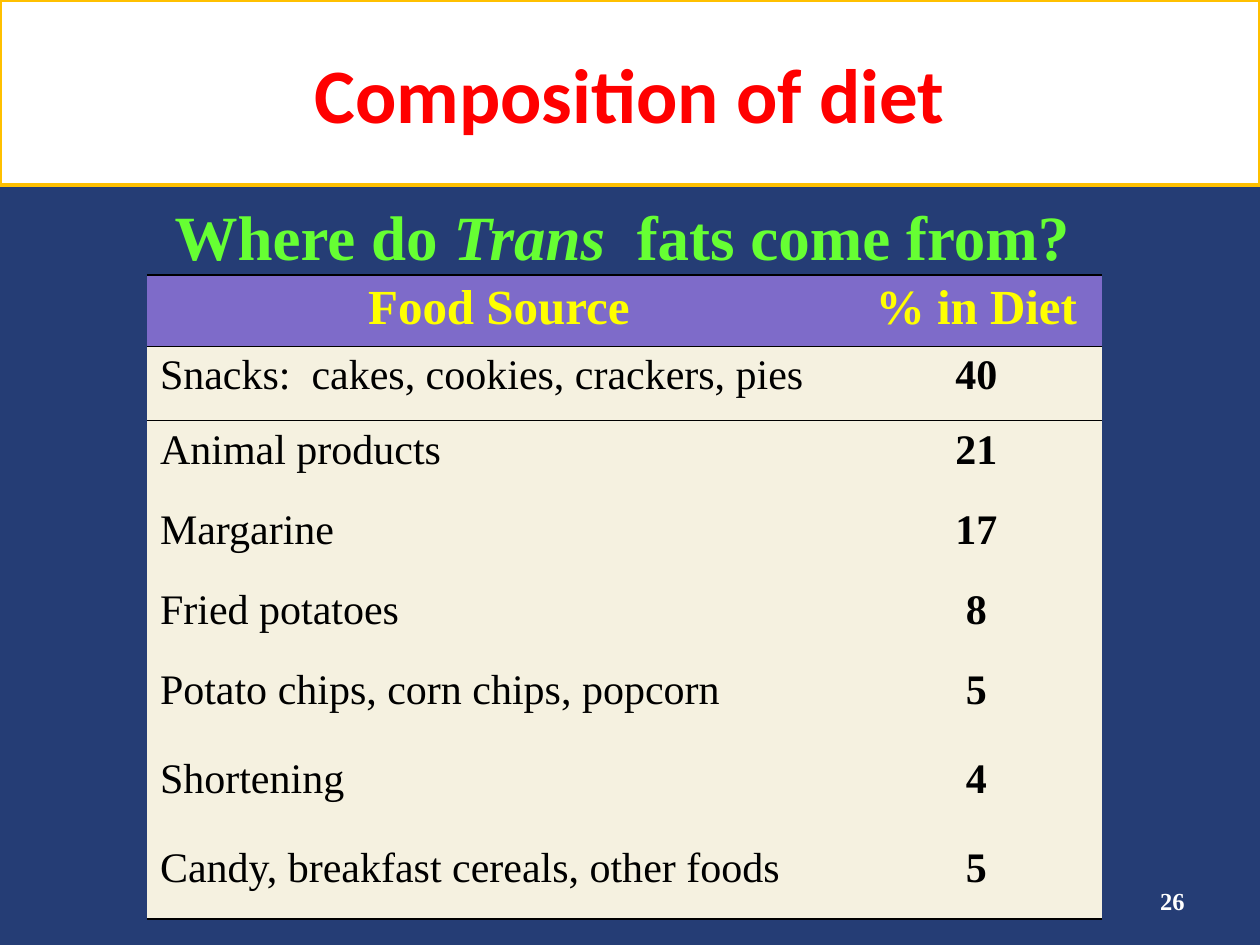
"""Build the slide on where trans fats in the diet come from."""
import pptx
import pptx.dml.color
import pptx.enum.shapes
import pptx.enum.text
import pptx.oxml
import pptx.oxml.ns
import pptx.util

Pt = pptx.util.Pt
RGBColor = pptx.dml.color.RGBColor
ALIGN = pptx.enum.text.PP_ALIGN
ANCHOR = pptx.enum.text.MSO_ANCHOR

NAVY = RGBColor(0x25, 0x3D, 0x75)
WHITE = RGBColor(0xFF, 0xFF, 0xFF)
GOLD = RGBColor(0xFF, 0xC0, 0x00)
RED = RGBColor(0xFF, 0x00, 0x00)
GREEN = RGBColor(0x66, 0xFF, 0x33)
YELLOW = RGBColor(0xFF, 0xFF, 0x00)
PURPLE = RGBColor(0x7E, 0x6B, 0xC9)
CREAM = RGBColor(0xF5, 0xF1, 0xE0)
BLACK = RGBColor(0x00, 0x00, 0x00)
SERIF = "Times New Roman"

TITLE = "Composition of diet"
QUESTION = [("Where do ", False), ("Trans ", True), (" fats come from? ", False)]
PAGE_NUMBER = "26"
HEADER = ("Food Source", "% in Diet")
SOURCES = [
    ("Snacks:  cakes, cookies, crackers, pies", 40),
    ("Animal products", 21),
    ("Margarine", 17),
    ("Fried potatoes", 8),
    ("Potato chips, corn chips, popcorn", 5),
    ("Shortening", 4),
    ("Candy, breakfast cereals, other foods", 5),
]
COLUMN_WIDTHS = (401.75, 144)
ROW_HEIGHTS = (40.5, 42.5, 45.7, 45.7, 45.7, 51, 51, 45.7)
PLAIN_TABLE_STYLE = "{2D5ABB26-0587-4C30-8999-92F81FD0307C}"


def style(paragraph, size, color, align=ALIGN.CENTER, bold=True, name=SERIF):
    paragraph.alignment = align
    font = paragraph.font
    font.name, font.size, font.bold = name, Pt(size), bold
    font.color.rgb = color


def add_text_box(page, left, top, width, height, anchor):
    frame = page.shapes.add_textbox(Pt(left), Pt(top), Pt(width), Pt(height)).text_frame
    frame.word_wrap = True
    frame.vertical_anchor = anchor
    return frame


def add_border(cell, side):
    cell._tc.get_or_add_tcPr().append(pptx.oxml.parse_xml(
        f'<a:{side} {pptx.oxml.ns.nsdecls("a")} w="{Pt(1)}"><a:solidFill>'
        f'<a:srgbClr val="{BLACK}"/></a:solidFill></a:{side}>'))


def add_title(page, width):
    box = page.shapes.add_shape(
        pptx.enum.shapes.MSO_SHAPE.RECTANGLE, 0, 0, width, Pt(105.84))
    box.shadow.inherit = False
    box.fill.solid()
    box.fill.fore_color.rgb = WHITE
    box.line.color.rgb = GOLD
    box.line.width = Pt(2)
    box.text_frame.vertical_anchor = ANCHOR.MIDDLE
    box.text_frame.text = TITLE
    style(box.text_frame.paragraphs[0], 44, RED, name="Calibri")


def add_question(page):
    frame = add_text_box(page, 0, 105.84, 720, 51.12, ANCHOR.TOP)
    frame.margin_top = Pt(7.2)
    frame.margin_bottom = Pt(2)
    para = frame.paragraphs[0]
    for text, italic in QUESTION:
        span = para.add_run()
        span.text = text
        span.font.italic = italic
    style(para, 36, GREEN)


def add_source_table(page):
    rows = [HEADER] + SOURCES
    frame = page.shapes.add_table(
        len(rows), len(HEADER), Pt(84.24), Pt(157),
        Pt(sum(COLUMN_WIDTHS)), Pt(sum(ROW_HEIGHTS)))
    table = frame.table
    table.horz_banding = False
    table._tbl.tblPr.find(pptx.oxml.ns.qn("a:tableStyleId")).text = PLAIN_TABLE_STYLE
    for column, width in zip(table.columns, COLUMN_WIDTHS):
        column.width = Pt(width)
    for row_index, values in enumerate(rows):
        table.rows[row_index].height = Pt(ROW_HEIGHTS[row_index])
        is_header = row_index == 0
        for column_index, value in enumerate(values):
            cell = table.cell(row_index, column_index)
            cell.text = str(value)
            is_name = column_index == 0 and not is_header
            style(cell.text_frame.paragraphs[0],
                  28 if is_header else 24,
                  YELLOW if is_header else BLACK,
                  ALIGN.LEFT if is_name else ALIGN.CENTER,
                  bold=not is_name)
            if row_index <= 1:
                add_border(cell, "lnT")
            if row_index in (0, len(rows) - 1):
                add_border(cell, "lnB")
            cell.fill.solid()
            cell.fill.fore_color.rgb = PURPLE if is_header else CREAM


def add_page_number(page):
    frame = add_text_box(page, 516.24, 500.4, 167.76, 28.8, ANCHOR.MIDDLE)
    frame.text = PAGE_NUMBER
    style(frame.paragraphs[0], 14, WHITE, ALIGN.RIGHT)


def main():
    deck = pptx.Presentation()
    deck.slide_width, deck.slide_height = Pt(720), Pt(540)
    page = deck.slides.add_slide(deck.slide_layouts[6])
    page.background.fill.solid()
    page.background.fill.fore_color.rgb = NAVY
    add_question(page)
    add_source_table(page)
    add_page_number(page)
    add_title(page, deck.slide_width)
    deck.save("out.pptx")


if __name__ == "__main__":
    main()
